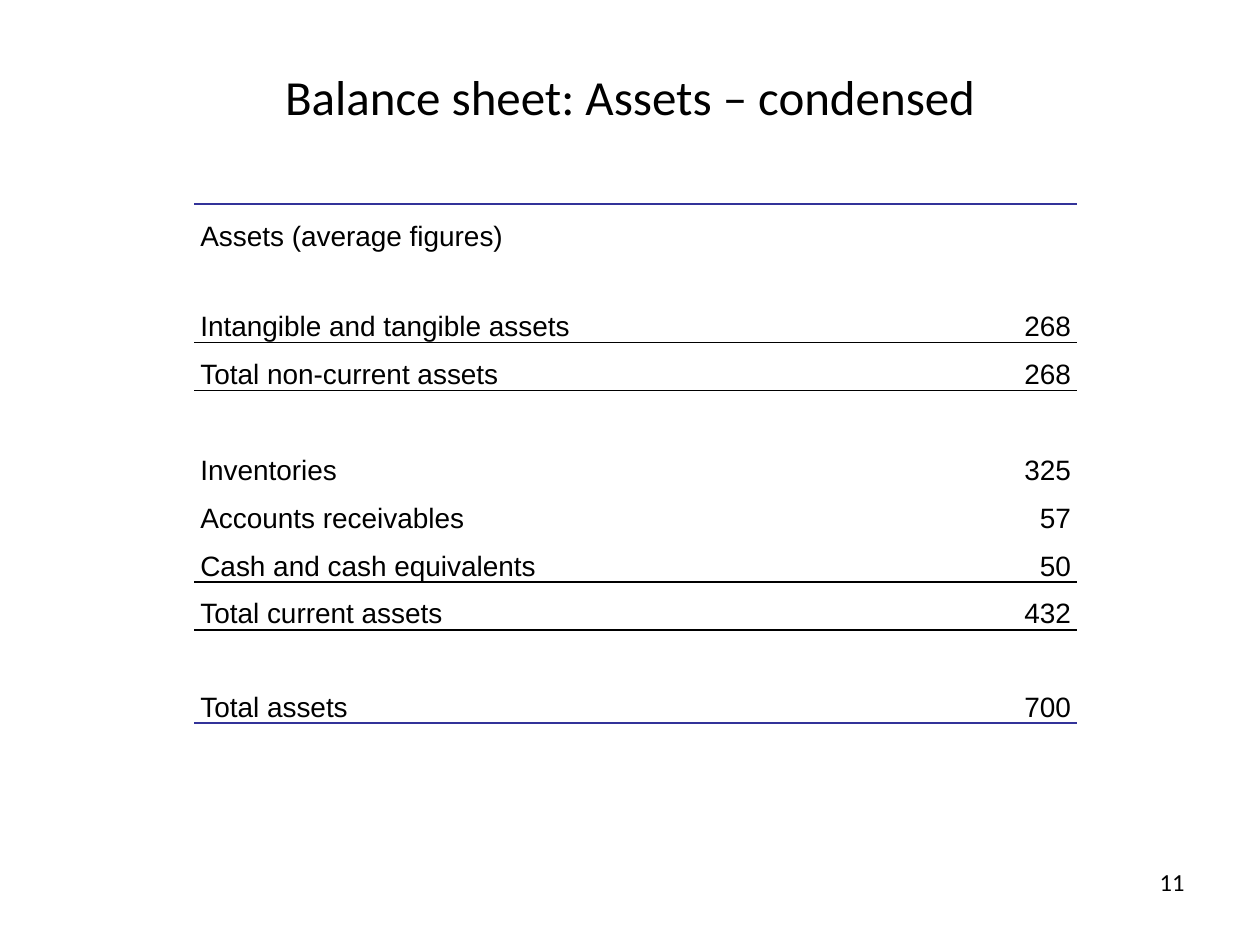
from lxml import etree
from pptx import Presentation
from pptx.dml.color import RGBColor
from pptx.enum.text import MSO_ANCHOR as Anchor, PP_ALIGN as Align
from pptx.oxml.ns import qn
from pptx.util import Inches, Pt

BLACK, NAVY = "000000", "333399"
NO_STYLE = "{2D5ABB26-0587-4C30-8999-92F81FD0307C}"


def color(hex_value):
    return RGBColor.from_string(hex_value)


class SlideBuilder:
    heading_font, table_font = "Calibri", "Arial"

    def __init__(self, prs):
        self.slide = prs.slides.add_slide(prs.slide_layouts[5])

    def put_text(self, frame, text, size, font, align, anchor):
        frame.word_wrap = True
        frame.vertical_anchor = anchor
        paragraph = frame.paragraphs[0]
        paragraph.alignment = align
        run = paragraph.add_run()
        run.text = text
        for name, value in {"size": Pt(size), "name": font, "bold": False}.items():
            setattr(run.font, name, value)
        run.font.color.rgb = color(BLACK)

    def title(self, text, left, top, width, height):
        heading = self.slide.shapes.title
        box = {"left": left, "top": top, "width": width, "height": height}
        for name, value in box.items():
            setattr(heading, name, Inches(value))
        self.put_text(heading.text_frame, text, 28, self.heading_font,
                      Align.CENTER, Anchor.MIDDLE)

    def page_number(self, text, *box):
        number = self.slide.shapes.add_textbox(*map(Inches, box))
        self.put_text(number.text_frame, text, 14, self.heading_font,
                      Align.RIGHT, Anchor.TOP)

    def border(self, cell, side, hex_value):
        line = etree.Element(qn(f"a:ln{side}"), w=str(Pt(1)))
        fill = etree.SubElement(line, qn("a:solidFill"))
        etree.SubElement(fill, qn("a:srgbClr"), val=hex_value)
        cell._tc.get_or_add_tcPr().insert(0, line)

    def table(self, rows, widths, heights, rules, *box):
        table = self.slide.shapes.add_table(
            len(rows), len(widths), *map(Inches, box)).table
        table.first_row = table.horz_banding = False
        table._tbl.tblPr.find(qn("a:tableStyleId")).text = NO_STYLE
        for column, width in zip(table.columns, widths):
            column.width = Inches(width)
        margins = {"margin_left": 0.05, "margin_right": 0.05,
                   "margin_top": 0, "margin_bottom": 0}
        for r, (values, height) in enumerate(zip(rows, heights)):
            table.rows[r].height = Inches(height)
            for c, align in enumerate((Align.LEFT, Align.RIGHT)):
                cell = table.cell(r, c)
                cell.fill.background()
                for name, value in margins.items():
                    setattr(cell, name, Inches(value))
                cell.vertical_anchor = Anchor.BOTTOM
                if values[c]:
                    self.put_text(cell.text_frame, values[c], 16,
                                  self.table_font, align, Anchor.BOTTOM)
                for side, hex_value in rules.get(r, {}).items():
                    self.border(cell, side, hex_value)


def main():
    prs = Presentation()
    prs.slide_width, prs.slide_height = Inches(10), Inches(7.5)
    builder = SlideBuilder(prs)

    # Heading and page number
    builder.title("Balance sheet: Assets – condensed", 0.5, 0.3, 9, 0.93)
    builder.page_number("11", 7.17, 6.83, 2.33, 0.52)

    # Balance sheet, with rules around each total
    blank = ("", "")
    assets = [
        ("Assets (average figures)", ""),
        blank,
        ("Intangible and tangible assets", "268"),
        ("Total non-current assets", "268"),
        blank,
        ("Inventories", "325"),
        ("Accounts receivables", "57"),
        ("Cash and cash equivalents", "50"),
        ("Total current assets", "432"),
        blank,
        ("Total assets", "700"),
    ]
    heights = [0.38] * len(assets)
    heights[1] = heights[9] = 0.34
    heights[10] = 0.4
    rules = {row: {"B": BLACK} for row in (2, 3, 7, 8)}
    rules.update({0: {"T": NAVY}, 10: {"B": NAVY}})
    builder.table(assets, (5.79, 1.22), heights, rules, 1.54, 1.62, 7.01, 4.09)

    prs.save("out.pptx")


if __name__ == "__main__":
    main()
